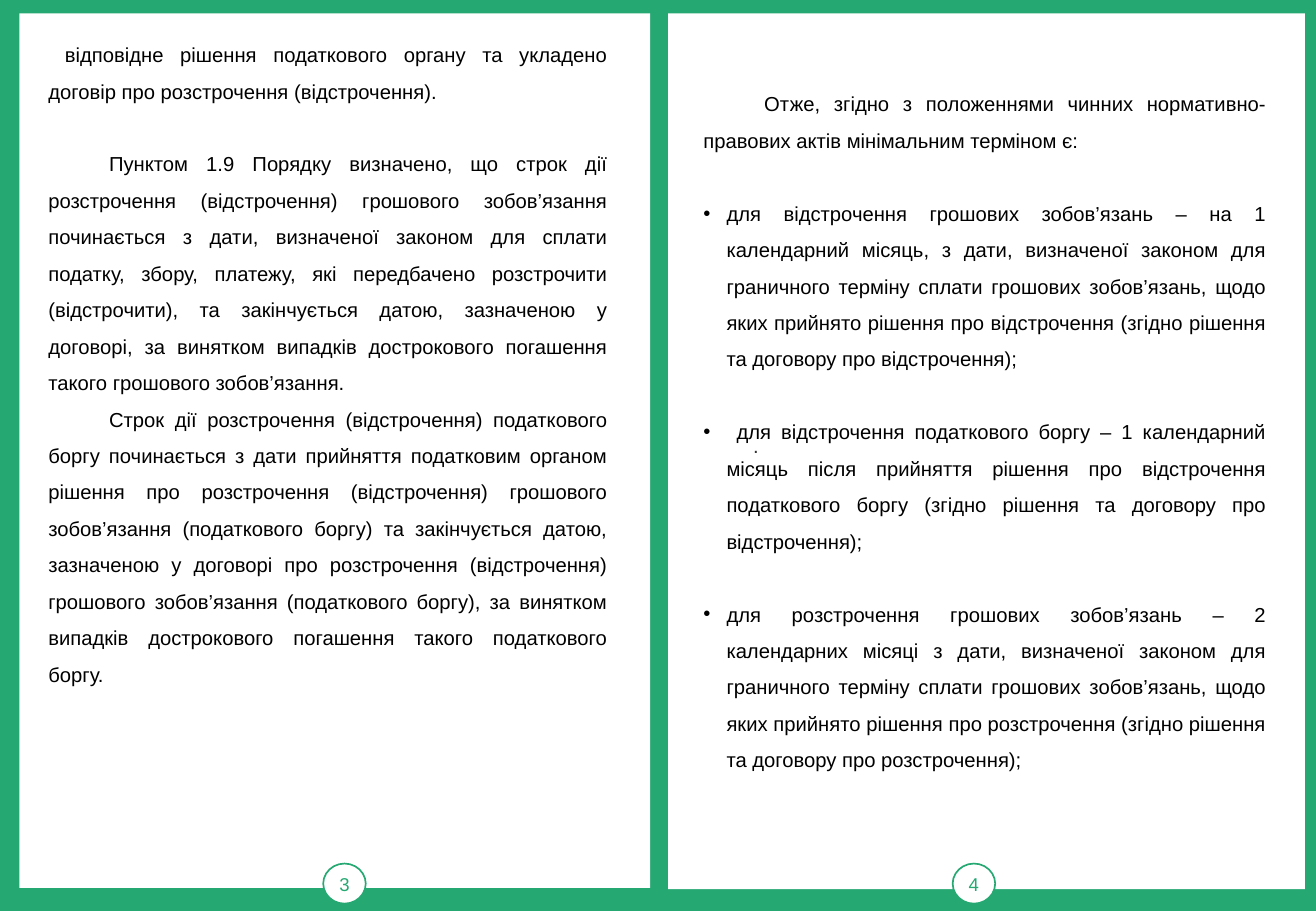
from dataclasses import dataclass

from lxml.etree import SubElement
from pptx import Presentation
from pptx.dml.color import RGBColor
from pptx.enum.shapes import MSO_SHAPE
from pptx.enum.text import MSO_ANCHOR, PP_ALIGN
from pptx.oxml.ns import qn
from pptx.util import Inches, Pt


@dataclass(frozen=True)
class Theme:
    font: str = "Arial"
    green: str = "25A872"
    white: str = "FFFFFF"
    black: str = "000000"
    gray: str = "333333"
    body_size: float = 12
    number_size: float = 11
    line_spacing: float = 1.5
    blank_line: float = 21.6


@dataclass(frozen=True)
class Passage:
    text: str
    first_line: float = 0
    bullet: bool = False
    gap: bool = False


class Booklet:
    """Draws on one slide; places are percentages of its width and height."""

    def __init__(self, presentation, theme):
        self.presentation = presentation
        self.theme = theme
        self.slide = presentation.slides.add_slide(presentation.slide_layouts[6])
        self.paint(self.slide.background.fill, theme.green)

    def paint(self, fill, color):
        fill.solid()
        fill.fore_color.rgb = RGBColor.from_string(color)

    def place(self, left, top, width, height):
        across = self.presentation.slide_width / 100
        down = self.presentation.slide_height / 100
        return (round(left * across), round(top * down),
                round(width * across), round(height * down))

    def panel(self, kind, area):
        shape = self.slide.shapes.add_shape(kind, *self.place(*area))
        shape.shadow.inherit = False
        self.paint(shape.fill, self.theme.white)
        shape.line.fill.background()
        return shape

    def add_text_run(self, paragraph, text, size, color):
        run = paragraph.add_run()
        run.text = text
        run.font.name = self.theme.font
        run.font.size = Pt(size)
        run.font.color.rgb = RGBColor.from_string(color)

    def page(self, area, number, number_left):
        self.panel(MSO_SHAPE.RECTANGLE, area)
        badge = self.panel(MSO_SHAPE.OVAL, (number_left, 94.8, 3.23, 4.4))
        self.paint(badge.line.fill, self.theme.green)
        badge.line.width = Pt(1)
        frame = badge.text_frame
        frame.margin_left = frame.margin_right = 0
        frame.margin_top = frame.margin_bottom = 0
        frame.vertical_anchor = MSO_ANCHOR.MIDDLE
        paragraph = frame.paragraphs[0]
        paragraph.alignment = PP_ALIGN.CENTER
        self.add_text_run(paragraph, str(number), self.theme.number_size, self.theme.green)

    def indent(self, paragraph, margin, first_line, bullet):
        properties = paragraph._p.get_or_add_pPr()
        properties.set("marL", str(Inches(margin)))
        properties.set("indent", str(Inches(first_line)))
        if bullet:
            SubElement(properties, qn("a:buFont"), typeface=self.theme.font)
            SubElement(properties, qn("a:buChar"), char="•")

    def text(self, area, passages, anchor, color, spacing, bottom=0.05):
        box = self.slide.shapes.add_textbox(*self.place(*area))
        frame = box.text_frame
        frame.word_wrap = True
        frame.vertical_anchor = anchor
        frame.margin_bottom = Inches(bottom)
        for index, passage in enumerate(passages):
            paragraph = frame.add_paragraph() if index else frame.paragraphs[0]
            paragraph.alignment = PP_ALIGN.JUSTIFY
            paragraph.line_spacing = spacing
            if passage.gap:
                paragraph.space_before = Pt(self.theme.blank_line)
            margin, first_line = (0.19, -0.19) if passage.bullet else (0, passage.first_line)
            self.indent(paragraph, margin, first_line, passage.bullet)
            self.add_text_run(paragraph, passage.text, self.theme.body_size, color)


LEFT_PAGE = [
    Passage(" відповідне рішення податкового органу та укладено договір про "
            "розстрочення (відстрочення)."),
    Passage("Пунктом 1.9 Порядку визначено, що строк дії розстрочення (відстрочення) "
            "грошового зобов’язання починається з дати, визначеної законом для сплати "
            "податку, збору, платежу, які передбачено розстрочити (відстрочити), та "
            "закінчується датою, зазначеною у договорі, за винятком випадків "
            "дострокового погашення такого грошового зобов’язання.",
            first_line=0.5, gap=True),
    Passage("Строк дії розстрочення (відстрочення) податкового боргу починається з дати "
            "прийняття податковим органом рішення про розстрочення (відстрочення) "
            "грошового зобов’язання (податкового боргу) та закінчується датою, "
            "зазначеною у договорі про розстрочення (відстрочення) грошового "
            "зобов’язання (податкового боргу), за винятком випадків дострокового "
            "погашення такого податкового боргу.", first_line=0.5),
]
RIGHT_PAGE = [
    Passage("Отже, згідно з положеннями чинних нормативно-правових актів мінімальним "
            "терміном є:", first_line=0.5),
    Passage("для відстрочення грошових зобов’язань – на 1 календарний місяць, з дати, "
            "визначеної законом для граничного терміну сплати грошових зобов’язань, "
            "щодо яких прийнято рішення про відстрочення (згідно рішення та договору "
            "про відстрочення);", bullet=True, gap=True),
    Passage(" для відстрочення податкового боргу – 1 календарний місяць після прийняття "
            "рішення про відстрочення податкового боргу (згідно рішення та договору "
            "про відстрочення);", bullet=True, gap=True),
    Passage("для розстрочення грошових зобов’язань – 2 календарних місяці з дати, "
            "визначеної законом для граничного терміну сплати грошових зобов’язань, "
            "щодо яких прийнято рішення про розстрочення (згідно рішення та договору "
            "про розстрочення);", bullet=True, gap=True),
]


def main():
    presentation = Presentation()
    presentation.slide_width = Inches(10.83)
    presentation.slide_height = Inches(7.5)
    theme = Theme()
    booklet = Booklet(presentation, theme)
    booklet.page((1.48, 1.47, 47.92, 96), 3, 24.56)
    booklet.page((50.78, 1.47, 48.38, 96.13), 4, 72.39)
    booklet.text((51.8, 3.07, 46.35, 91.2), [Passage(".", first_line=0.49)],
                 MSO_ANCHOR.MIDDLE, theme.gray, 1.15)
    booklet.text((52.54, 1.6, 44.6, 94.27), RIGHT_PAGE,
                 MSO_ANCHOR.MIDDLE, theme.black, theme.line_spacing, bottom=0.35)
    booklet.text((2.77, 2.67, 44.32, 94.27), LEFT_PAGE,
                 MSO_ANCHOR.TOP, theme.black, theme.line_spacing)
    presentation.save("out.pptx")


if __name__ == "__main__":
    main()
